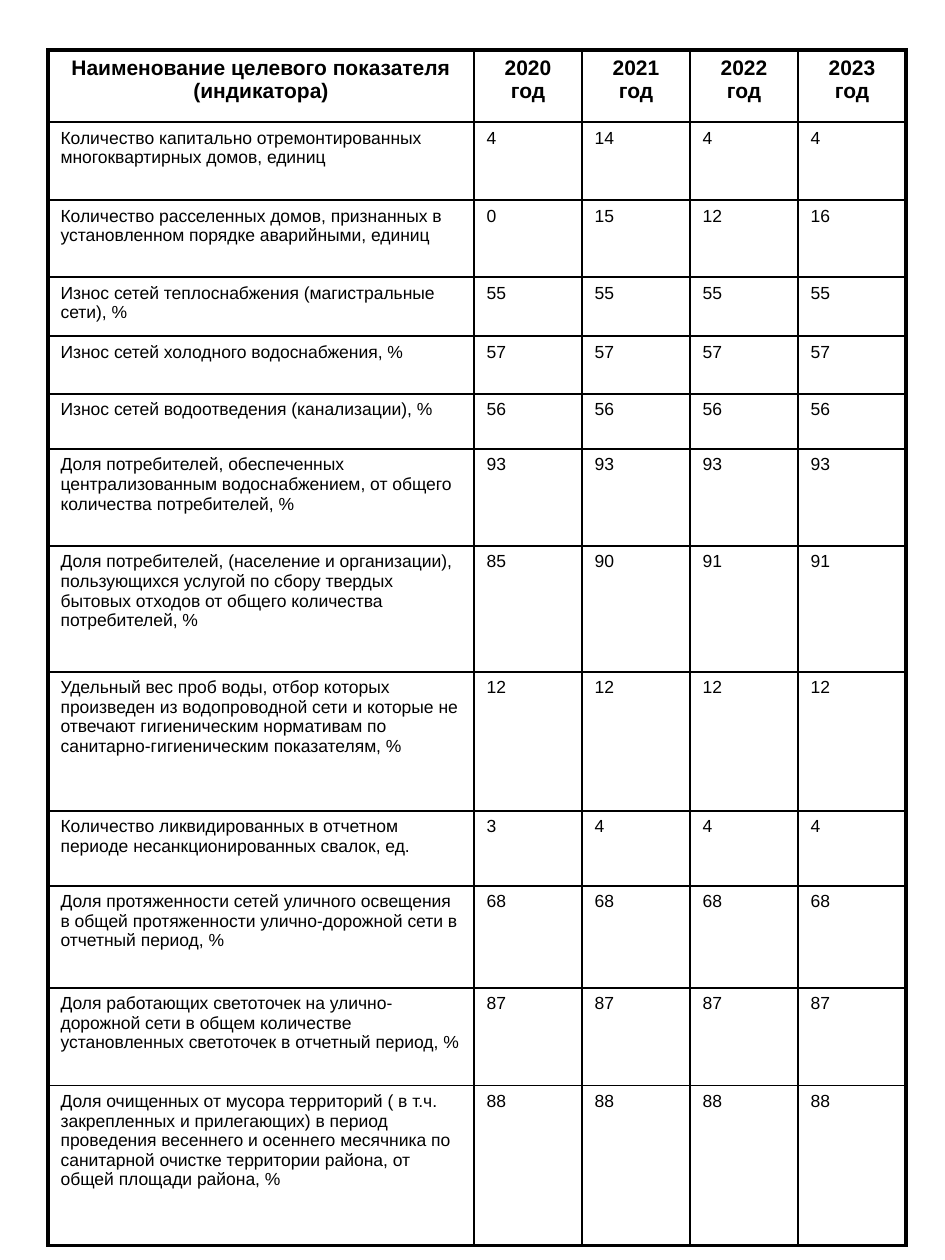
"""Builds a slide with a table of municipal housing and utility targets for 2020–2023."""
from dataclasses import dataclass

from lxml import etree
from pptx import Presentation
from pptx import util as u
from pptx.dml.color import RGBColor
from pptx.enum import text
from pptx.oxml.ns import qn
from pptx.slide import Slide

PX = u.Inches(1) // 126
BLACK = RGBColor(0, 0, 0)
YEARS = range(2020, 2024)
COLUMN_WIDTHS = [426] + [108] * len(YEARS)
HEADER_HEIGHT = 72
INDICATORS = [
    (78, "Количество капитально отремонтированных многоквартирных домов, единиц", (4, 14, 4, 4)),
    (77, "Количество расселенных домов, признанных в установленном порядке аварийными, единиц",
     (0, 15, 12, 16)),
    (59, "Износ сетей теплоснабжения (магистральные сети), %", (55, 55, 55, 55)),
    (58, "Износ сетей холодного водоснабжения, %", (57, 57, 57, 57)),
    (55, "Износ сетей водоотведения (канализации), %", (56, 56, 56, 56)),
    (97, "Доля потребителей, обеспеченных централизованным водоснабжением, "
         "от общего количества потребителей, %", (93, 93, 93, 93)),
    (126, "Доля потребителей, (население и организации), пользующихся услугой по сбору "
          "твердых бытовых отходов от общего количества потребителей, %", (85, 90, 91, 91)),
    (139, "Удельный вес проб воды, отбор которых произведен из водопроводной сети и которые "
          "не отвечают гигиеническим нормативам по санитарно-гигиеническим показателям, %",
     (12, 12, 12, 12)),
    (75, "Количество ликвидированных в отчетном периоде несанкционированных свалок, ед.",
     (3, 4, 4, 4)),
    (102, "Доля протяженности сетей уличного освещения в общей протяженности "
          "улично-дорожной сети в отчетный период, %", (68, 68, 68, 68)),
    (98, "Доля работающих светоточек на улично-дорожной сети в общем количестве "
         "установленных светоточек в отчетный период, %", (87, 87, 87, 87)),
    (160, "Доля очищенных от мусора территорий ( в т.ч. закрепленных и прилегающих) в период "
          "проведения весеннего и осеннего месячника по санитарной очистке территории района, "
          "от общей площади района, %", (88, 88, 88, 88)),
]


@dataclass
class Sheet:
    slide: Slide
    font: str = "Arial"
    color: RGBColor = BLACK
    header_size: float = 12
    body_size: float = 10
    inner_line: float = 1
    outer_line: float = 2.25

    def table(self, left, top, widths, heights, rows):
        frame = self.slide.shapes.add_table(
            len(heights), len(widths), left * PX, top * PX, sum(widths) * PX, sum(heights) * PX)
        grid = frame.table
        grid.first_row = grid.horz_banding = False
        for column, width in zip(grid.columns, widths):
            column.width = width * PX
        for row, height in zip(grid.rows, heights):
            row.height = height * PX
        last_row, last_column = len(heights) - 1, len(widths) - 1
        for r, row in enumerate(rows):
            for c, wording in enumerate(row):
                cell = grid.cell(r, c)
                self.borders(cell, L=c == 0, R=c == last_column, T=r == 0, B=r == last_row)
                cell.fill.background()
                self.wording(cell, str(wording), header=r == 0)

    def borders(self, cell, **outer_sides):
        properties = cell._tc.get_or_add_tcPr()
        for side, is_outer in outer_sides.items():
            weight = self.outer_line if is_outer else self.inner_line
            line = etree.SubElement(properties, qn(f"a:ln{side}"), w=str(u.Pt(weight)))
            fill = etree.SubElement(line, qn("a:solidFill"))
            etree.SubElement(fill, qn("a:srgbClr"), val=str(self.color))

    def wording(self, cell, content, header):
        cell.text = content
        paragraph = cell.text_frame.paragraphs[0]
        spacing = etree.SubElement(paragraph._p.get_or_add_pPr(), qn("a:spcBef"))
        etree.SubElement(spacing, qn("a:spcPct"), val="20000")
        paragraph.alignment = text.PP_ALIGN.CENTER if header else text.PP_ALIGN.LEFT
        paragraph.font.name = self.font
        paragraph.font.size = u.Pt(self.header_size if header else self.body_size)
        paragraph.font.bold = header
        paragraph.font.color.rgb = self.color


def main():
    deck = Presentation()
    deck.slide_width, deck.slide_height = u.Inches(7.5), u.Inches(10)
    sheet = Sheet(deck.slides.add_slide(deck.slide_layouts[6]))
    header = ["Наименование целевого показателя (индикатора)", *(f"{year} год" for year in YEARS)]
    heights = [HEADER_HEIGHT] + [height for height, _, _ in INDICATORS]
    rows = [header] + [[indicator, *values] for _, indicator, values in INDICATORS]
    sheet.table(48, 50, COLUMN_WIDTHS, heights, rows)
    deck.save("out.pptx")


if __name__ == "__main__":
    main()
